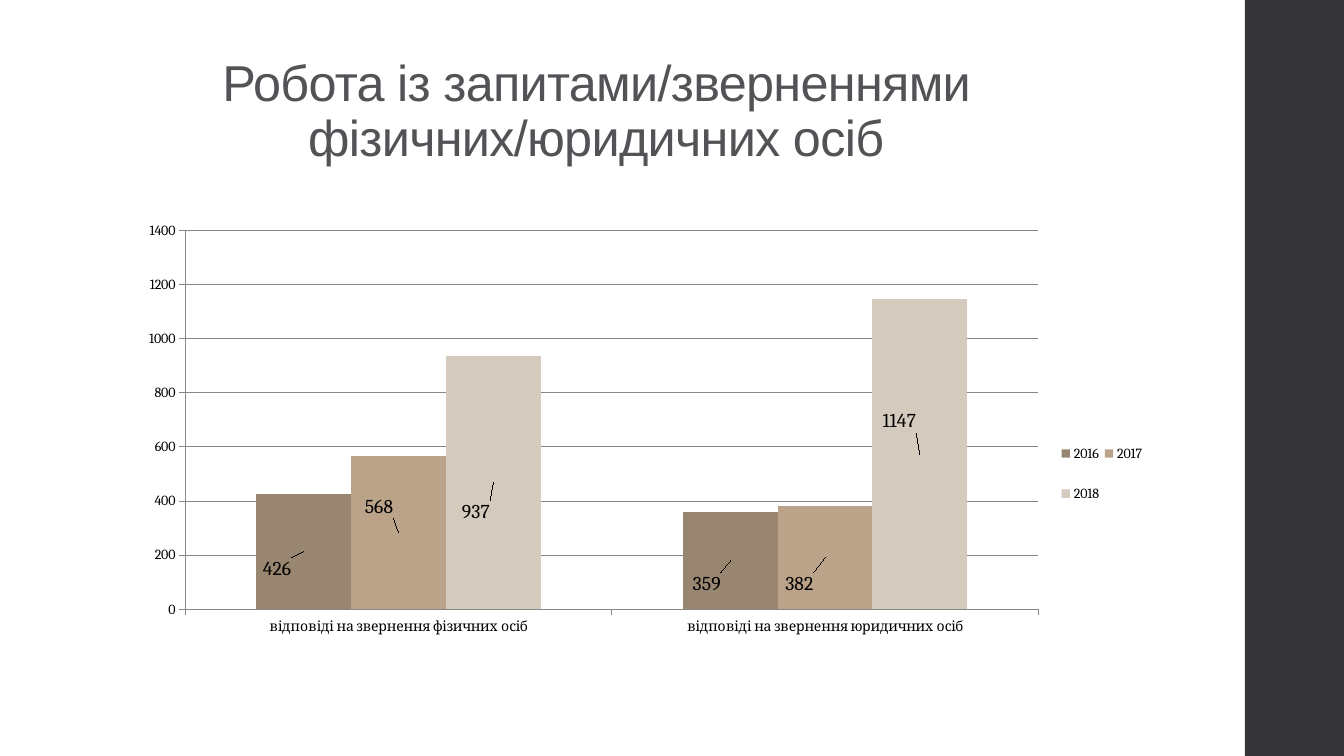
from lxml.etree import SubElement
from pptx import Presentation
from pptx.chart.data import CategoryChartData
from pptx.dml.color import RGBColor
from pptx.enum.chart import (XL_CHART_TYPE, XL_LABEL_POSITION, XL_LEGEND_POSITION,
                             XL_TICK_LABEL_POSITION, XL_TICK_MARK)
from pptx.enum.shapes import MSO_SHAPE
from pptx.enum.text import MSO_ANCHOR, PP_ALIGN
from pptx.oxml.ns import qn
from pptx.util import Cm, Pt

YEARS = {"2016": (426, 359), "2017": (568, 382), "2018": (937, 1147)}
GROUPS = ["відповіді на звернення фізичних осіб",
          "відповіді на звернення юридичних осіб"]
# Label shifts from the bar centre, in percent of the chart size
SHIFTS = {"2016": [(-2.6, 3.3), (-2.3, 4.4)],
          "2017": [(-1.9, -4.9), (-2.5, 5)],
          "2018": [(-1.7, 5.6), (-2, -6.2)]}


def paint(code):
    return RGBColor.from_string(code)


def apply(target, values):
    for name, value in values.items():
        setattr(target, name, value)


def place(parent, index, **values):
    """Give a chart part a manual layout."""
    for old in parent.findall(qn("c:layout")):
        parent.remove(old)
    layout = SubElement(parent, qn("c:layout"))
    manual = SubElement(layout, qn("c:manualLayout"))
    for name, value in values.items():
        SubElement(manual, qn("c:" + name)).set("val", str(value))
    parent.insert(index, layout)


class Deck:
    ink, dark, line = "535357", "353537", "868686"
    bars = ["988671", "BAA388", "D4CABE"]
    head, body = "Arial", "Cambria"

    def __init__(self):
        self.show = Presentation()
        apply(self.show, {"slide_width": Cm(33.87), "slide_height": Cm(19.05)})
        self.slide = self.show.slides.add_slide(self.show.slide_layouts[5])

    def font(self, font, size, name, color):
        apply(font, {"size": Pt(size), "name": name, "bold": False})
        font.color.rgb = paint(color)

    def block(self, box, color):
        shape = self.slide.shapes.add_shape(MSO_SHAPE.RECTANGLE, *map(Cm, box))
        shape.shadow.inherit = False
        shape.fill.solid()
        shape.fill.fore_color.rgb = paint(color)
        shape.line.fill.background()

    def title(self, box, text):
        title = self.slide.shapes.title
        apply(title, dict(zip(("left", "top", "width", "height"), map(Cm, box))))
        frame = title.text_frame
        apply(frame, {"text": text, "word_wrap": True,
                      "vertical_anchor": MSO_ANCHOR.BOTTOM})
        para = frame.paragraphs[0]
        apply(para, {"alignment": PP_ALIGN.CENTER, "line_spacing": 0.9})
        run = para.runs[0]
        self.font(run.font, 36, self.head, self.ink)
        run.font._element.set("spc", "-50")

    def chart(self, box):
        data = CategoryChartData()
        data.categories = GROUPS
        for year, counts in YEARS.items():
            data.add_series(year, counts)
        chart = self.slide.shapes.add_chart(
            XL_CHART_TYPE.COLUMN_CLUSTERED, *map(Cm, box), data).chart
        apply(chart, {"has_title": False, "has_legend": True})
        self.font(chart.font, 10, self.body, "000000")
        plot = chart.plots[0]
        apply(plot, {"gap_width": 150, "overlap": 0, "vary_by_categories": False})
        place(plot._element.getparent(), 0, layoutTarget="inner", xMode="edge",
              yMode="edge", x=0.06, y=0.036, w=0.833, h=0.723)
        self.axes(chart)
        self.legend(chart.legend)
        for series, color in zip(plot.series, self.bars):
            series.format.fill.solid()
            series.format.fill.fore_color.rgb = paint(color)
            self.labels(series)

    def axes(self, chart):
        grid = chart.value_axis
        apply(grid, {"minimum_scale": 0, "maximum_scale": 1400, "major_unit": 200,
                     "has_major_gridlines": True})
        chart.category_axis.tick_label_position = XL_TICK_LABEL_POSITION.LOW
        for axis in (chart.category_axis, grid):
            axis.major_tick_mark = XL_TICK_MARK.OUTSIDE
        for part in (chart.category_axis, grid, grid.major_gridlines):
            part.format.line.width = Pt(0.75)
            part.format.line.color.rgb = paint(self.line)

    def legend(self, legend):
        apply(legend, {"position": XL_LEGEND_POSITION.RIGHT,
                       "include_in_layout": False})
        place(legend._element, 1, xMode="edge", yMode="edge",
              x=0.91, y=0.4, w=0.09, h=0.2)

    def labels(self, series):
        for index, (right, down) in enumerate(SHIFTS[series.name]):
            label = series.points[index].data_label
            self.font(label.font, 14, self.body, "000000")
            label.position = XL_LABEL_POSITION.CENTER
            place(label._dLbl, 1, x=right / 100, y=down / 100)


def main():
    deck = Deck()
    # Side band
    deck.block((31.37, 0, 2.5, 19.05), deck.dark)
    # Heading
    deck.title((4.52, 1.52, 21.01, 2.82),
               "Робота із запитами/зверненнями фізичних/юридичних осіб")
    # Replies by year
    deck.chart((3.12, 5.33, 25.81, 13.21))
    deck.show.save("out.pptx")


if __name__ == "__main__":
    main()
